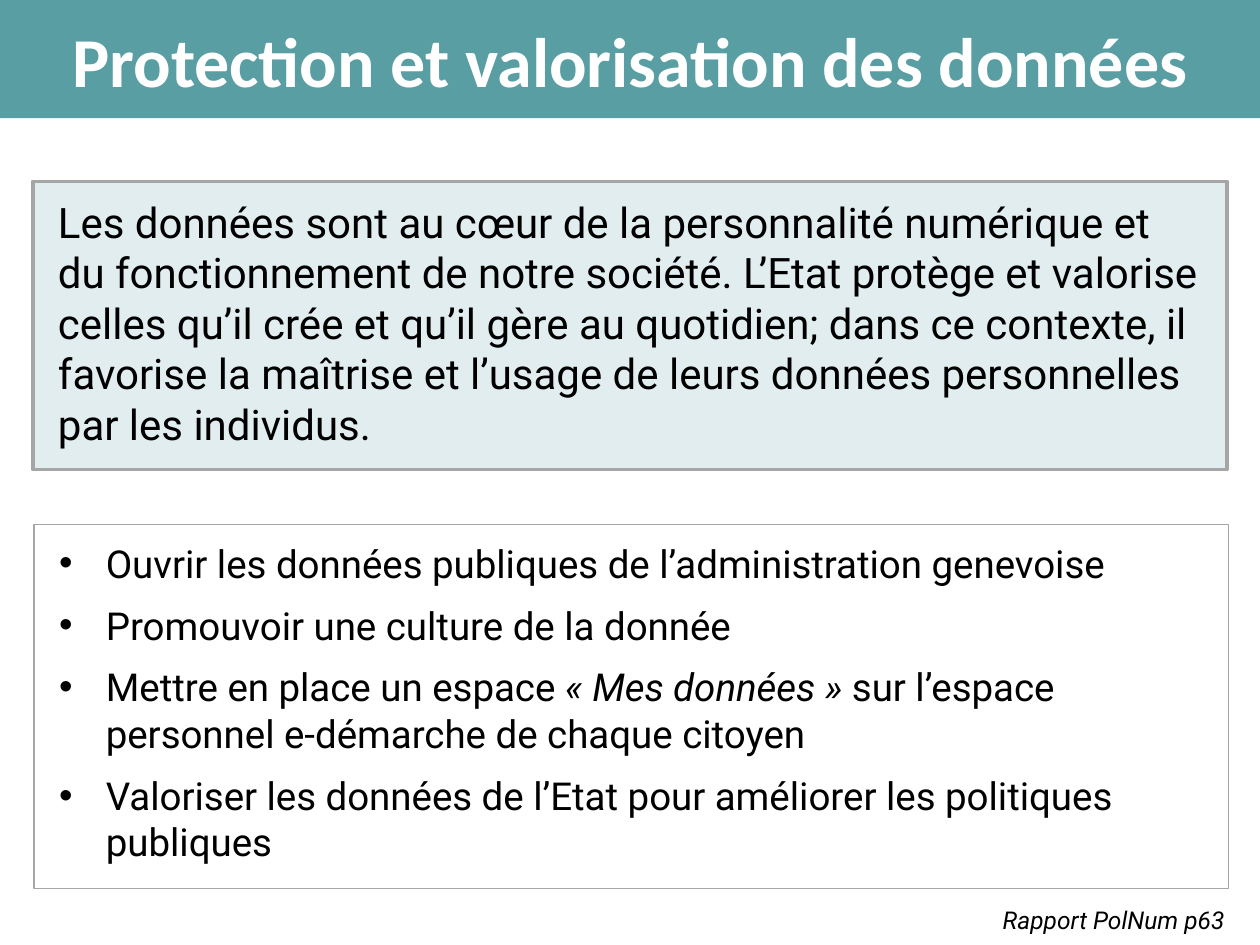
from dataclasses import dataclass
from typing import Any

import pptx
import pptx.dml.color
import pptx.enum.shapes
import pptx.enum.text
import pptx.oxml
import pptx.oxml.ns
import pptx.util

RGB = pptx.dml.color.RGBColor
TEAL = RGB(0x59, 0x9E, 0xA3)
GREY = RGB(0xA6, 0xA6, 0xA6)
BLACK = RGB(0, 0, 0)
WHITE = RGB(0xFF, 0xFF, 0xFF)

WIDTH, HEIGHT = pptx.util.Inches(10), pptx.util.Inches(7.5)
INDENT = pptx.util.Inches(0.37)
ALIGN = pptx.enum.text.PP_ALIGN
ANCHOR = pptx.enum.text.MSO_ANCHOR
FIT = pptx.enum.text.MSO_AUTO_SIZE

Run = tuple[str, bool]  # wording, italic


@dataclass
class Area:
    """Shares of the slide's width and height."""
    left: float
    top: float
    wide: float
    high: float

    def box(self) -> tuple[int, int, int, int]:
        return (int(self.left * WIDTH), int(self.top * HEIGHT),
                int(self.wide * WIDTH), int(self.high * HEIGHT))


@dataclass
class Panel:
    area: Area
    paras: list[list[Run]]
    size: int
    line: float
    alpha: int = 0  # percent of teal
    bullet: bool = False


PANELS = [
    Panel(Area(0.027, 0.555, 0.948, 0.385), [
        [("Ouvrir les données publiques de l’administration genevoise", False)],
        [("Promouvoir une culture de la donnée", False)],
        [("Mettre en place un espace ", False), ("« Mes données » ", True),
         ("sur l’espace personnel e-démarche de chaque citoyen", False)],
        [("Valoriser les données de l’Etat pour améliorer les politiques "
          "publiques", False)],
    ], size=22, line=0.75, bullet=True),
    Panel(Area(0.026, 0.192, 0.948, 0.305), [
        [("Les données sont au cœur de la personnalité numérique et du "
          "fonctionnement de notre société. L’Etat protège et valorise celles "
          "qu’il crée et qu’il gère au quotidien; dans ce contexte, il "
          "favorise la maîtrise et l’usage de leurs données personnelles par "
          "les individus.", False)],
    ], size=24, line=2, alpha=18),
]


def apply(item: Any, values: dict[str, Any]) -> None:
    for key, value in values.items():
        setattr(item, key, value)


def style(font: Any, size: int, color: RGB, name: str = "Roboto",
          **more: bool) -> None:
    apply(font, {"size": pptx.util.Pt(size), "name": name, **more})
    font.color.rgb = color


def add_sub(node: Any, tag: str, **attrs: Any) -> None:
    sub = pptx.oxml.parse_xml(f"<a:{tag} {pptx.oxml.ns.nsdecls('a')}/>")
    for key, value in attrs.items():
        sub.set(key, str(value))
    node.append(sub)


def add_bullet(para: Any) -> None:
    props = para._p.get_or_add_pPr()
    props.set("marL", str(INDENT))
    props.set("indent", str(-INDENT))
    add_sub(props, "buFont", typeface="Arial")
    add_sub(props, "buChar", char="•")


def draw_title(slide: Any, text: str) -> None:
    title = slide.shapes.title
    apply(title, dict(zip(("left", "top", "width", "height"),
                          Area(0, 0, 1, 0.125).box())))
    title.fill.solid()
    title.fill.fore_color.rgb = TEAL
    frame = title.text_frame
    frame.text = text
    apply(frame, {"vertical_anchor": ANCHOR.MIDDLE, "word_wrap": True,
                  "auto_size": FIT.NONE})
    para = frame.paragraphs[0]
    para.alignment = ALIGN.CENTER
    style(para.runs[0].font, 40, WHITE, "Calibri", bold=True)


def draw_panel(slide: Any, panel: Panel) -> None:
    shape = slide.shapes.add_shape(
        pptx.enum.shapes.MSO_SHAPE.RECTANGLE, *panel.area.box())
    shape.shadow.inherit = False
    if panel.alpha:
        shape.fill.solid()
        shape.fill.fore_color.rgb = TEAL
        color = shape._element.spPr.find(".//" + pptx.oxml.ns.qn("a:srgbClr"))
        add_sub(color, "alpha", val=panel.alpha * 1000)
    else:
        shape.fill.background()
    shape.line.color.rgb = GREY
    shape.line.width = pptx.util.Pt(panel.line)

    frame = shape.text_frame
    side, edge = pptx.util.Inches(0.2), pptx.util.Inches(0.12)
    apply(frame, {"margin_left": side, "margin_right": side,
                  "margin_top": edge, "margin_bottom": edge,
                  "vertical_anchor": ANCHOR.TOP, "word_wrap": True})
    for rank, runs in enumerate(panel.paras):
        para = frame.add_paragraph() if rank else frame.paragraphs[0]
        para.alignment = ALIGN.LEFT
        if rank:
            para.space_before = pptx.util.Pt(9)
        if panel.bullet:
            add_bullet(para)
        style(para.font, panel.size, BLACK)
        for text, slant in runs:
            run = para.add_run()
            run.text = text
            style(run.font, panel.size, BLACK, italic=slant)


def draw_source(slide: Any, text: str) -> None:
    box = slide.shapes.add_textbox(*Area(0.786, 0.951, 0.201, 0.045).box())
    frame = box.text_frame
    frame.text = text
    apply(frame, {"word_wrap": False, "auto_size": FIT.SHAPE_TO_FIT_TEXT})
    style(frame.paragraphs[0].runs[0].font, 14, BLACK, italic=True)


def main() -> None:
    deck = pptx.Presentation()
    apply(deck, {"slide_width": WIDTH, "slide_height": HEIGHT})
    slide = deck.slides.add_slide(deck.slide_layouts[5])
    draw_title(slide, "Protection et valorisation des données")
    for panel in PANELS:
        draw_panel(slide, panel)
    draw_source(slide, "Rapport PolNum p63")
    deck.save("out.pptx")


if __name__ == "__main__":
    main()
